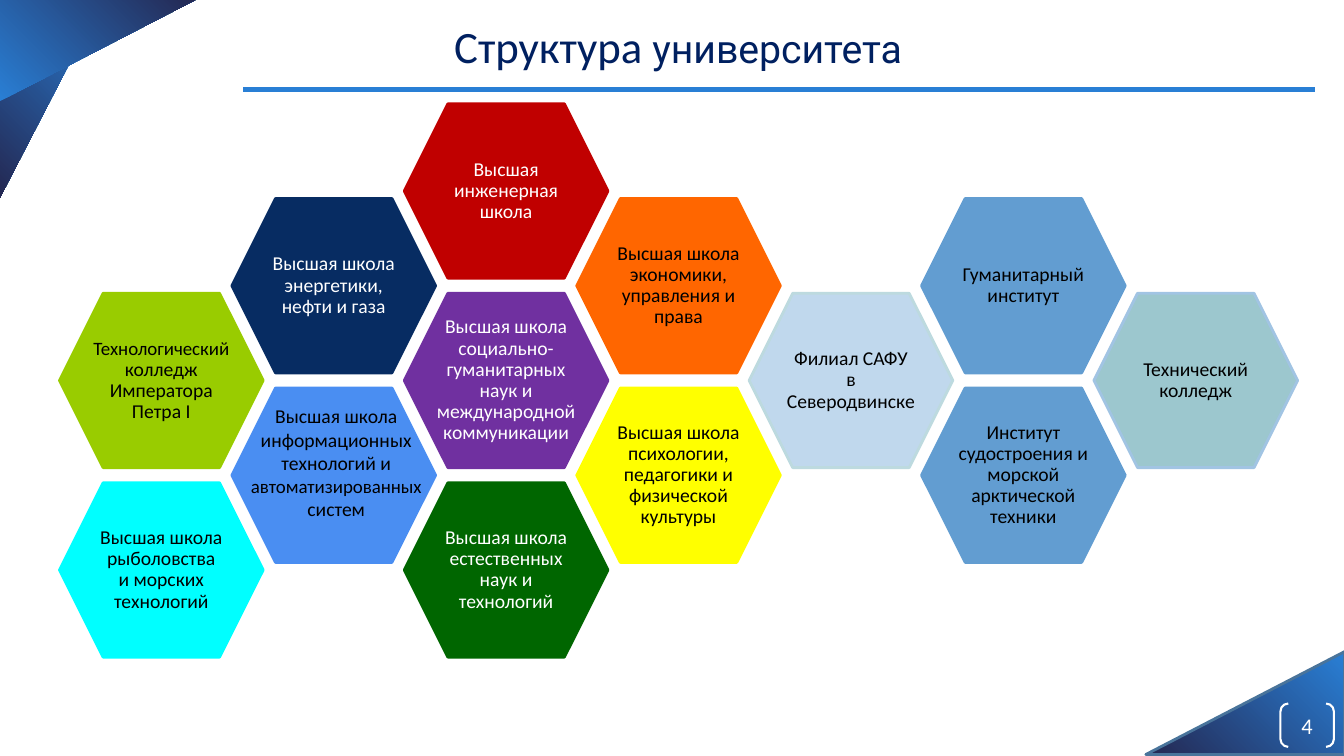
from dataclasses import dataclass

from lxml import etree
from pptx import Presentation
from pptx.dml.color import RGBColor
from pptx.enum.shapes import MSO_CONNECTOR, MSO_SHAPE
from pptx.enum.text import MSO_ANCHOR, MSO_AUTO_SIZE, PP_ALIGN
from pptx.oxml.ns import qn
from pptx.util import Inches, Pt

HEXAGON = MSO_SHAPE.HEXAGON
TRIANGLE = MSO_SHAPE.RIGHT_TRIANGLE
BRACKETS = MSO_SHAPE.DOUBLE_BRACKET
STRAIGHT = MSO_CONNECTOR.STRAIGHT
CENTER = PP_ALIGN.CENTER
MIDDLE = MSO_ANCHOR.MIDDLE
NO_AUTOFIT = MSO_AUTO_SIZE.NONE

SLIDE_W, SLIDE_H = 13.33, 7.5


@dataclass(frozen=True)
class Theme:
    font: str = "Calibri"
    title_font: str = "Roboto"
    title_color: str = "002060"
    accent: str = "297FD5"
    dark: str = "242852"
    corner_line: str = "49749B"
    white: str = "FFFFFF"
    black: str = "000000"
    title: float = 32
    title_small: float = 28
    number: float = 16
    label: float = 14
    label_small: float = 13.5


T = Theme()

# Honeycomb: origin, column and half-row steps, cell size
COMB_X, COMB_Y = 0.59, 1.03
STEP_X, STEP_Y = 1.71, 0.94
HEX_W, HEX_H = 2.02, 1.73

# Column, half-row, fill, line, text colour, runs of (text, size)
CELLS = [
    (2, 0, "C00000", "C00000", T.white, [("Высшая инженерная школа", T.label)]),
    (3, 1, "FF6600", "FF6600", T.black,
     [("Высшая школа экономики, управления и права", T.label)]),
    (2, 2, "7030A0", "7030A0", T.white,
     [("Высшая школа социально-гуманитарных наук и международной коммуникации", T.label)]),
    (1, 1, "072C62", "072C62", T.white,
     [("Высшая школа энергетики, нефти и газа", T.label)]),
    (2, 4, "006600", "006600", T.white,
     [("Высшая школа естественных наук и технологий", T.label)]),
    (3, 3, "FFFF00", "FFFF00", T.black,
     [("Высшая школа психологии, педагогики и физической культуры", T.label)]),
    (4, 2, "C0D8ED", "BDDADF", T.black, [("Филиал САФУ\nв Северодвинске", T.label)]),
    (5, 1, "629DD1", "629DD1", T.black, [("Гуманитарный институт", T.label)]),
    (5, 3, "629DD1", "629DD1", T.black,
     [("Институт судостроения и морской арктической техники", T.label)]),
    (6, 2, "9CC7CE", "A1C4E3", T.black, [("Технический колледж", T.label)]),
    (0, 2, "99CC00", "99CC00", T.black,
     [("Технологический", T.label_small), (" колледж\nИмператора Петра I", T.label)]),
    (0, 4, "00FFFF", "00FFFF", T.black,
     [("Высшая школа\nрыболовства\nи морских технологий", T.label)]),
]
IT_SCHOOL = (1, 3, "4A8EF2", "4A8EF2", T.black, [])
IT_RUNS = [("Высшая школа информационных технологий и ", T.label),
           ("автоматизированных ", T.label_small), ("систем", T.label)]


def rgb(value):
    return RGBColor.from_string(value)


def write(tf, runs, color, spacing=None):
    """Centred paragraph from runs of (text, size); newlines become line breaks."""
    p = tf.paragraphs[0]
    p.alignment = CENTER
    if spacing:
        p.line_spacing = spacing
    p.font.name = T.font
    p.font.size = Pt(runs[0][1])
    p.font.color.rgb = rgb(color)
    for text, size in runs:
        for i, line in enumerate(text.split("\n")):
            if i:
                p.add_line_break()
            r = p.add_run()
            r.text = line
            if size != runs[0][1]:
                r.font.size = Pt(size)
    return p


def add_preset(s, kind, x, y, w, h, fill=None, line=None, weight=2):
    sp = s.shapes.add_shape(kind, Inches(x), Inches(y), Inches(w), Inches(h))
    sp.shadow.inherit = False
    if fill:
        sp.fill.solid()
        sp.fill.fore_color.rgb = rgb(fill)
    else:
        sp.fill.background()
    if line:
        sp.line.color.rgb = rgb(line)
        sp.line.width = Pt(weight)
    else:
        sp.line.fill.background()
    return sp


def set_insets(tf):
    tf.margin_left = tf.margin_right = tf.margin_top = tf.margin_bottom = 0


def add_corner(s, x, y, rotation, flip=False, line=None):
    sp = add_preset(s, TRIANGLE, x, y, 1.02, 1.97, line=line)
    sp.rotation = rotation
    if flip:
        sp._element.spPr.find(qn("a:xfrm")).set("flipH", "1")
    sp.fill.gradient()
    sp.fill.gradient_angle = 135
    for stop, color, pos in zip(sp.fill.gradient_stops, (T.accent, T.dark), (0, 1)):
        stop.color.rgb = rgb(color)
        stop.position = pos


def add_decor(s):
    # Corner triangles
    add_corner(s, SLIDE_W - 1.49, SLIDE_H - 1.51, 270, line=T.corner_line)
    add_corner(s, 0, -0.01, 180, flip=True)
    add_corner(s, 0.47, -0.49, 90)
    # Rule under the title
    rule = s.shapes.add_connector(STRAIGHT, Inches(13.04), Inches(0.89),
                                  Inches(2.41), Inches(0.89))
    rule.line.color.rgb = rgb(T.accent)
    rule.line.width = Pt(3.75)
    etree.SubElement(rule._element.spPr, qn("a:effectLst"))


def add_number(s, x, y, w, h):
    sp = add_preset(s, BRACKETS, x, y, w, h, line=T.white, weight=1.5)
    sp.adjustments[0] = 0.18
    tf = sp.text_frame
    set_insets(tf)
    tf.vertical_anchor = MIDDLE
    write(tf, [("4", T.number)], T.white)


def add_title(s, x, y, w, h):
    sp = s.shapes.title
    sp.left, sp.top, sp.width, sp.height = (Inches(v) for v in (x, y, w, h))
    tf = sp.text_frame
    tf.auto_size = NO_AUTOFIT
    tf.vertical_anchor = MIDDLE
    p = write(tf, [("Структура", T.title), (" университета", T.title_small)], T.title_color)
    p.runs[1].font.name = T.title_font


def add_cell(s, col, row, fill, line, color, runs):
    x, y = COMB_X + col * STEP_X, COMB_Y + row * STEP_Y
    sp = add_preset(s, HEXAGON, x, y, HEX_W, HEX_H, fill, line)
    tf = sp.text_frame
    set_insets(tf)
    tf.word_wrap = True
    tf.vertical_anchor = MIDDLE
    if runs:
        write(tf, runs, color, 0.9)
    return x, y


def add_honeycomb(s):
    for cell in CELLS:
        add_cell(s, *cell)
    # The longest word needs a label wider than its hexagon's text area
    x, y = add_cell(s, *IT_SCHOOL)
    label = s.shapes.add_textbox(Inches(x - 0.03), Inches(y + 0.11), Inches(2.13), Inches(1.28))
    label.text_frame.word_wrap = True
    write(label.text_frame, IT_RUNS, T.black)


def main():
    prs = Presentation()
    prs.slide_width, prs.slide_height = Inches(SLIDE_W), Inches(SLIDE_H)
    s = prs.slides.add_slide(prs.slide_layouts[5])
    add_decor(s)
    add_number(s, 12.7, 6.98, 0.53, 0.43)
    add_title(s, 1.88, 0.13, 9.69, 0.64)
    add_honeycomb(s)
    prs.save("out.pptx")


if __name__ == "__main__":
    main()
